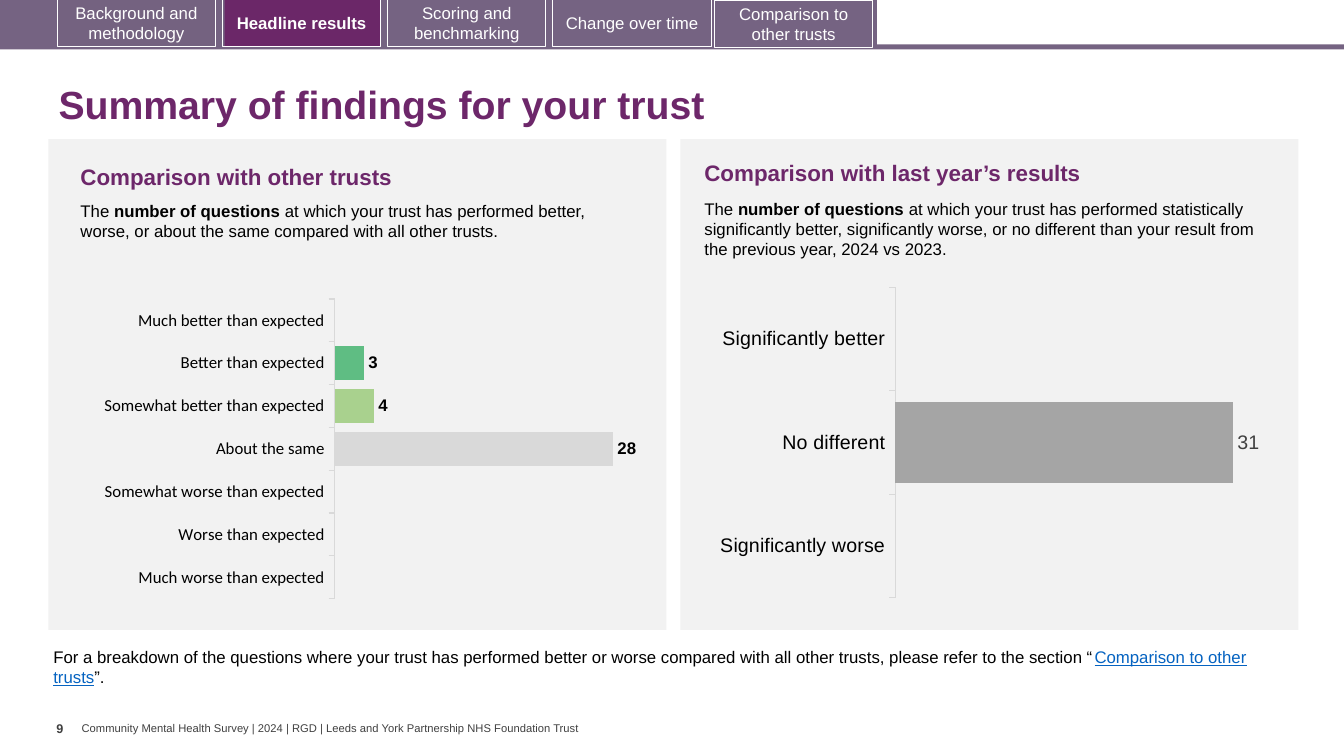
from lxml import etree
from pptx import Presentation
from pptx.chart.data import CategoryChartData
from pptx.dml.color import RGBColor
from pptx.enum.chart import XL_CHART_TYPE, XL_LABEL_POSITION, XL_TICK_LABEL_POSITION, XL_TICK_MARK
from pptx.enum.shapes import MSO_SHAPE
from pptx.enum.text import MSO_ANCHOR, PP_ALIGN
from pptx.oxml.ns import qn
from pptx.util import Pt

RECT = MSO_SHAPE.RECTANGLE
MIDDLE = MSO_ANCHOR.MIDDLE
CENTER = PP_ALIGN.CENTER
BARS = XL_CHART_TYPE.BAR_CLUSTERED
OUTEND = XL_LABEL_POSITION.OUTSIDE_END
OUTSIDE = XL_TICK_MARK.OUTSIDE
LOW = XL_TICK_LABEL_POSITION.LOW

HUES = {
    "plum": "6D276A", "active": "6B2768", "tab": "756382", "first": "746280",
    "panel": "F2F2F2", "white": "FFFFFF", "black": "000000", "gray": "404040",
    "link": "0563C1", "axis": "D9D9D9",
}

TABS = [
    ("Background and methodology", 41, "first"),
    ("Headline results", 159, None),
    ("Scoring and benchmarking", 277, None),
    ("Change over time", 395, "tab"),
    ("Comparison to other trusts", 510.5, "tab"),
]

TRUSTS = {
    "head": "Comparison with other trusts",
    "body": "at which your trust has performed better, worse, or about the same "
            "compared with all other trusts.",
    "texts": (15.8, 13.7, 40.3, 381),
    "chart": (-5, 96.5, 448.5, 245.5),
    "plot": (0.467, 0.072, 0.476, 0.872),
    "top": 30, "font": "Calibri", "size": 12, "label": "black", "bold": True,
    "bars": [
        ("Much better than expected", None, "419999"),
        ("Better than expected", 3, "5FBD83"),
        ("Somewhat better than expected", 4, "A9D18E"),
        ("About the same", 28, "D9D9D9"),
        ("Somewhat worse than expected", None, "FFD966"),
        ("Worse than expected", None, "F1BE48"),
        ("Much worse than expected", None, "E87722"),
    ],
}

YEARS = {
    "head": "Comparison with last year’s results",
    "body": "at which your trust has performed statistically significantly better, "
            "significantly worse, or no different than your result from the previous "
            "year, 2024 vs 2023.",
    "texts": (10.1, 10.8, 38.9, 413.3),
    "chart": (-7.9, 97.2, 448.5, 244),
    "plot": (0.36, 0.035, 0.608, 0.909),
    "top": 35, "font": "Arial", "size": 14, "label": "gray", "bold": False,
    "bars": [
        ("Significantly better", None, "9DC3E6"),
        ("No different", 31, "A5A5A5"),
        ("Significantly worse", None, "7030A0"),
    ],
}


def color(hue):
    return RGBColor.from_string(HUES.get(hue, hue))


def style(font, size, hue, bold=False, name="Arial"):
    font.name = name
    font.size = Pt(size)
    font.bold = bold
    font.color.rgb = color(hue)


def write(frame, text, size, hue="black", bold=False):
    run = frame.paragraphs[0].add_run()
    run.text = text
    style(run.font, size, hue, bold)
    return run


def block(slide, box, fill=None, line=None):
    shape = slide.shapes.add_shape(RECT, *map(Pt, box))
    shape.shadow.inherit = False
    if fill:
        shape.fill.solid()
        shape.fill.fore_color.rgb = color(fill)
    else:
        shape.fill.background()
    if line:
        shape.line.color.rgb = color(line)
        shape.line.width = Pt(0.75)
    else:
        shape.line.fill.background()
    return shape


def textbox(slide, box, wrap=True):
    frame = slide.shapes.add_textbox(*map(Pt, box)).text_frame
    frame.word_wrap = wrap
    return frame


def tab_bar(slide, box):
    left, top, width, height = box
    block(slide, (left, top + 31.7, width, 3.6), "tab")
    block(slide, (left, top, 626.4, 33.8), "tab")
    block(slide, (left + 160.5, top, 111, 33), "active")
    for text, x, fill in TABS:
        drop = 0 if text == TABS[-1][0] else -0.7
        tab = block(slide, (left + x, top + drop, 113, 34), fill, "white")
        frame = tab.text_frame
        frame.word_wrap = True
        frame.vertical_anchor = MIDDLE
        frame.paragraphs[0].alignment = CENTER
        write(frame, text, 12, "white", text == "Headline results")


def heading(slide, box):
    title = slide.shapes.title
    title.left, title.top, title.width, title.height = map(Pt, box)
    frame = title.text_frame
    frame.vertical_anchor = MIDDLE
    frame.paragraphs[0].alignment = PP_ALIGN.LEFT
    frame.paragraphs[0].line_spacing = 0.9
    write(frame, "Summary of findings for your trust", 28, "plum", True)


def set_plot(chart, plot):
    area = chart._chartSpace.chart.plotArea
    for old in area.findall(qn("c:layout")):
        area.remove(old)
    layout = etree.Element(qn("c:layout"))
    area.insert(0, layout)
    manual = etree.SubElement(layout, qn("c:manualLayout"))
    pairs = [("layoutTarget", "inner"), ("xMode", "edge"), ("yMode", "edge")]
    pairs += zip("xywh", map(str, plot))
    for tag, val in pairs:
        etree.SubElement(manual, qn("c:" + tag)).set("val", val)


def bar_chart(slide, box, spec):
    data = CategoryChartData(number_format="0")
    data.categories = [name for name, _, _ in spec["bars"]]
    data.add_series("Series 1", [val for _, val, _ in spec["bars"]])
    chart = slide.shapes.add_chart(BARS, *map(Pt, box), data).chart
    chart.has_legend = False
    chart.has_title = False
    style(chart.font, spec["size"], "black", name=spec["font"])
    set_plot(chart, spec["plot"])

    cats = chart.category_axis
    cats.reverse_order = True
    cats.has_major_gridlines = False
    cats.major_tick_mark = OUTSIDE
    cats.tick_label_position = LOW
    cats.format.line.color.rgb = color("axis")
    cats.format.line.width = Pt(0.75)
    style(cats.tick_labels.font, spec["size"], "black", name=spec["font"])

    vals = chart.value_axis
    vals.minimum_scale = 0
    vals.maximum_scale = spec["top"]
    vals.has_major_gridlines = False
    vals.visible = False

    plot = chart.plots[0]
    plot.gap_width = 27
    plot.vary_by_categories = False
    series = plot.series[0]
    for i, (_, _, hue) in enumerate(spec["bars"]):
        fill = series.points[i].format.fill
        fill.solid()
        fill.fore_color.rgb = color(hue)
    labels = series.data_labels
    labels.show_value = True
    labels.position = OUTEND
    labels.number_format = "0"
    labels.number_format_is_linked = False
    style(labels.font, spec["size"], spec["label"], spec["bold"])


def panel(slide, box, spec):
    left, top = box[:2]
    block(slide, box, "panel")
    inset, head, body, width = spec["texts"]
    frame = textbox(slide, (left + inset, top + head, 396, 26.6))
    write(frame, spec["head"], 16, "plum", True)
    frame = textbox(slide, (left + inset, top + body, width, 51))
    write(frame, "The ", 12)
    write(frame, "number of questions ", 12, bold=True)
    write(frame, spec["body"], 12)
    x, y, wide, high = spec["chart"]
    bar_chart(slide, (left + x, top + y, wide, high), spec)


def note(slide, box):
    frame = textbox(slide, box)
    write(frame, "For a breakdown of the questions where your trust has performed better "
          "or worse compared with all other trusts, please refer to the section “", 12)
    write(frame, "Comparison to other trusts", 12, "link").font.underline = True
    write(frame, "”.", 12)


def footer(slide, box):
    left, top, width, height = box
    page = textbox(slide, (left, top, 18, height), False)
    page.margin_left = page.margin_right = 0
    write(page, "9", 9, "gray", True)
    frame = textbox(slide, (left + 18, top + 4.3, width - 18, 9.4), False)
    frame.margin_left = frame.margin_right = 0
    frame.margin_top = frame.margin_bottom = 0
    frame.vertical_anchor = MIDDLE
    write(frame, "Community Mental Health Survey | 2024 | RGD | "
          "Leeds and York Partnership NHS Foundation Trust", 8, "gray")


def main():
    deck = Presentation()
    deck.slide_width, deck.slide_height = Pt(960), Pt(540)
    slide = deck.slides.add_slide(deck.slide_layouts[5])
    tab_bar(slide, (0, 0, 960, 35.3))
    heading(slide, (34.6, 50.4, 899.3, 51.8))
    panel(slide, (34.6, 99.4, 441.4, 350.6), TRUSTS)
    panel(slide, (486, 99.4, 441.4, 350.6), YEARS)
    note(slide, (31, 458.6, 879, 36))
    footer(slide, (40.3, 511.2, 378.7, 28.8))
    deck.save("out.pptx")


if __name__ == "__main__":
    main()
